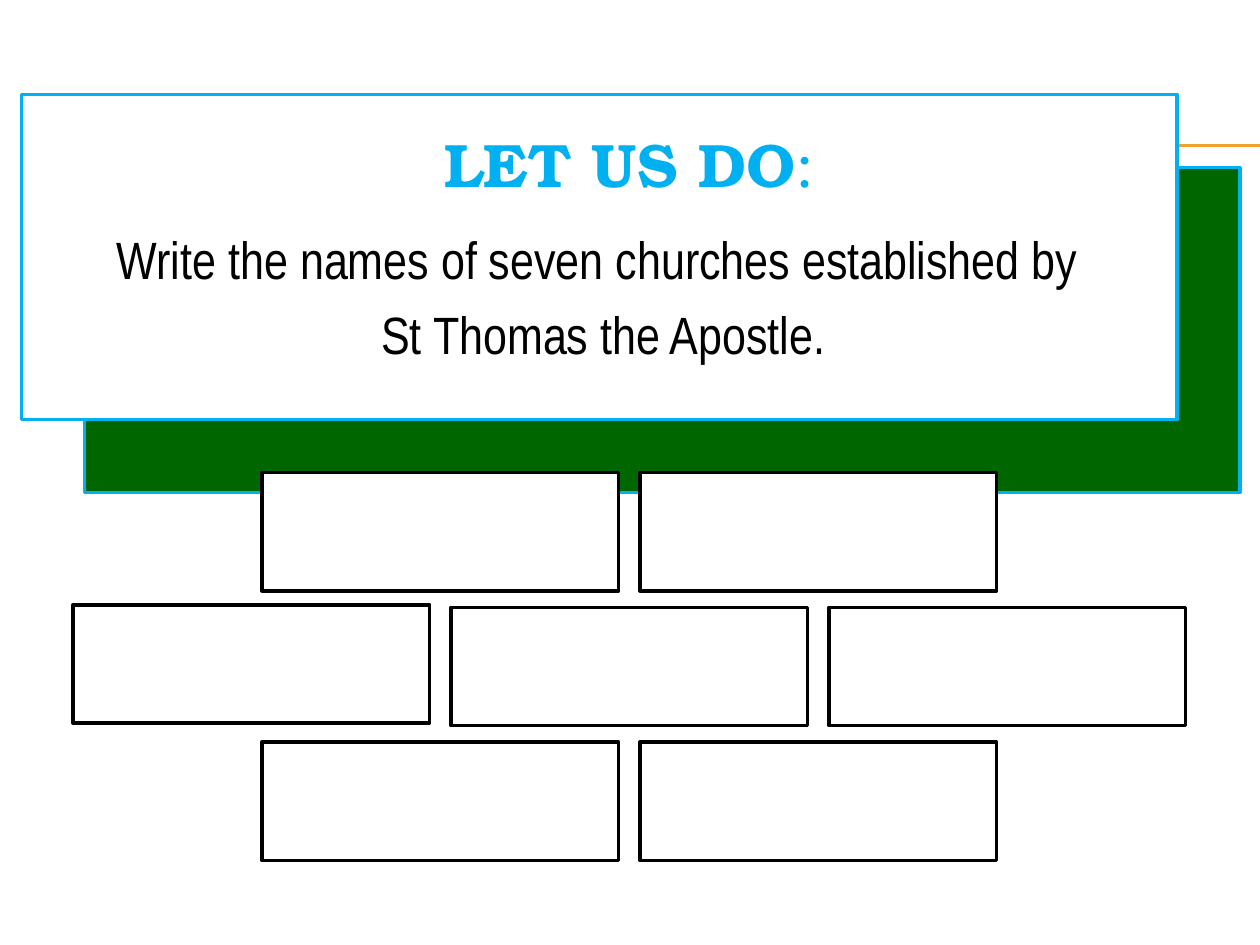
from lxml.etree import SubElement
from pptx import Presentation
from pptx.dml.color import RGBColor
from pptx.enum.shapes import MSO_CONNECTOR, MSO_SHAPE
from pptx.enum.text import MSO_ANCHOR, MSO_AUTO_SIZE, PP_ALIGN
from pptx.oxml.ns import qn
from pptx.util import Inches, Pt

COLORS = {"accent": "00B0F0", "panel": "006600", "rule": "F0A22E",
          "paper": "FFFFFF", "ink": "000000"}
WIDTH, HEIGHT = 10, 7.5


def color(name):
    return RGBColor.from_string(COLORS[name])


def place(shape, box):
    shape.left, shape.top, shape.width, shape.height = map(Inches, box)


def add_rectangle(slide, box, fill, line):
    shape = slide.shapes.add_shape(MSO_SHAPE.RECTANGLE, *map(Inches, box))
    shape.shadow.inherit = False
    shape.fill.solid()
    shape.fill.fore_color.rgb = color(fill)
    shape.line.color.rgb = color(line)
    shape.line.width = Pt(2)


def add_run(paragraph, text, font, size, color_name, bold=False):
    run = paragraph.add_run()
    run.text = text
    run.font.name = font
    run.font.size = Pt(size)
    run.font.bold = bold
    run.font.color.rgb = color(color_name)


def add_rules(slide, left, top):
    """Draw the thin double rule that runs off to the right edge."""
    for y in (top, top + 0.01):
        rule = slide.shapes.add_connector(
            MSO_CONNECTOR.STRAIGHT, Inches(left), Inches(y), Inches(WIDTH), Inches(y))
        rule.line.color.rgb = color("rule")
        rule.line.width = Pt(0.75)
        SubElement(rule._element.spPr, qn("a:effectLst"))


def add_panel(slide, box):
    """Draw the white panel over its offset green backing."""
    left, top, width, height = box
    add_rectangle(slide, (left + 0.5, top + 0.58, width, height), "panel", "accent")
    add_rectangle(slide, box, "paper", "accent")


def bring_to_front(slide, shape):
    slide.shapes._spTree.append(shape._element)


def fill_title(slide, box):
    title = slide.shapes.title
    place(title, box)
    bring_to_front(slide, title)
    frame = title.text_frame
    frame.vertical_anchor = MSO_ANCHOR.MIDDLE
    frame.auto_size = MSO_AUTO_SIZE.NONE
    paragraph = frame.paragraphs[0]
    paragraph.alignment = PP_ALIGN.CENTER
    add_run(paragraph, "LET US DO", "TeX Gyre Bonum", 35, "accent", bold=True)
    add_run(paragraph, ":", "TeX Gyre Bonum", 35, "accent")


def fill_task(slide, box):
    body = slide.placeholders[1]
    place(body, box)
    bring_to_front(slide, body)
    frame = body.text_frame
    frame.auto_size = MSO_AUTO_SIZE.NONE
    lines = ("Write the names of seven churches established by ",
             "St Thomas the Apostle.")
    for index, text in enumerate(lines):
        paragraph = frame.add_paragraph() if index else frame.paragraphs[0]
        paragraph.alignment = PP_ALIGN.CENTER
        paragraph.space_before = Pt(7)
        properties = paragraph._p.get_or_add_pPr()
        properties.set("marL", str(Inches(0.38)))
        properties.set("indent", str(Inches(-0.38)))
        SubElement(properties, qn("a:buNone"))
        add_run(paragraph, text, "Arial Narrow", 30, "ink")


def add_answer_boxes(slide, box, counts):
    """Centre rows of equal answer boxes, one row per count."""
    left, top, width, height = box
    column, row = width / max(counts), height / len(counts)
    for index, count in enumerate(counts):
        start = left + (width - count * column) / 2
        for number in range(count):
            # The first box of the full row sits slightly higher
            lift = 0.02 if count == max(counts) and number == 0 else 0
            add_rectangle(slide, (start + number * column + 0.08,
                                  top + index * row - lift,
                                  column - 0.17, row - 0.13), "paper", "ink")


def main():
    presentation = Presentation()
    presentation.slide_width, presentation.slide_height = Inches(WIDTH), Inches(HEIGHT)
    slide = presentation.slides.add_slide(presentation.slide_layouts[1])
    slide.background.fill.solid()
    slide.background.fill.fore_color.rgb = color("paper")
    add_rules(slide, 0.56, 1.15)
    add_panel(slide, (0.17, 0.75, 9.17, 2.58))
    fill_title(slide, (0, 0.83, WIDTH, 0.92))
    fill_task(slide, (0.33, 1.75, 8.92, 1))
    add_answer_boxes(slide, (0.5, HEIGHT / 2, 9, 3.21), (2, 3, 2))
    presentation.save("out.pptx")


if __name__ == "__main__":
    main()
